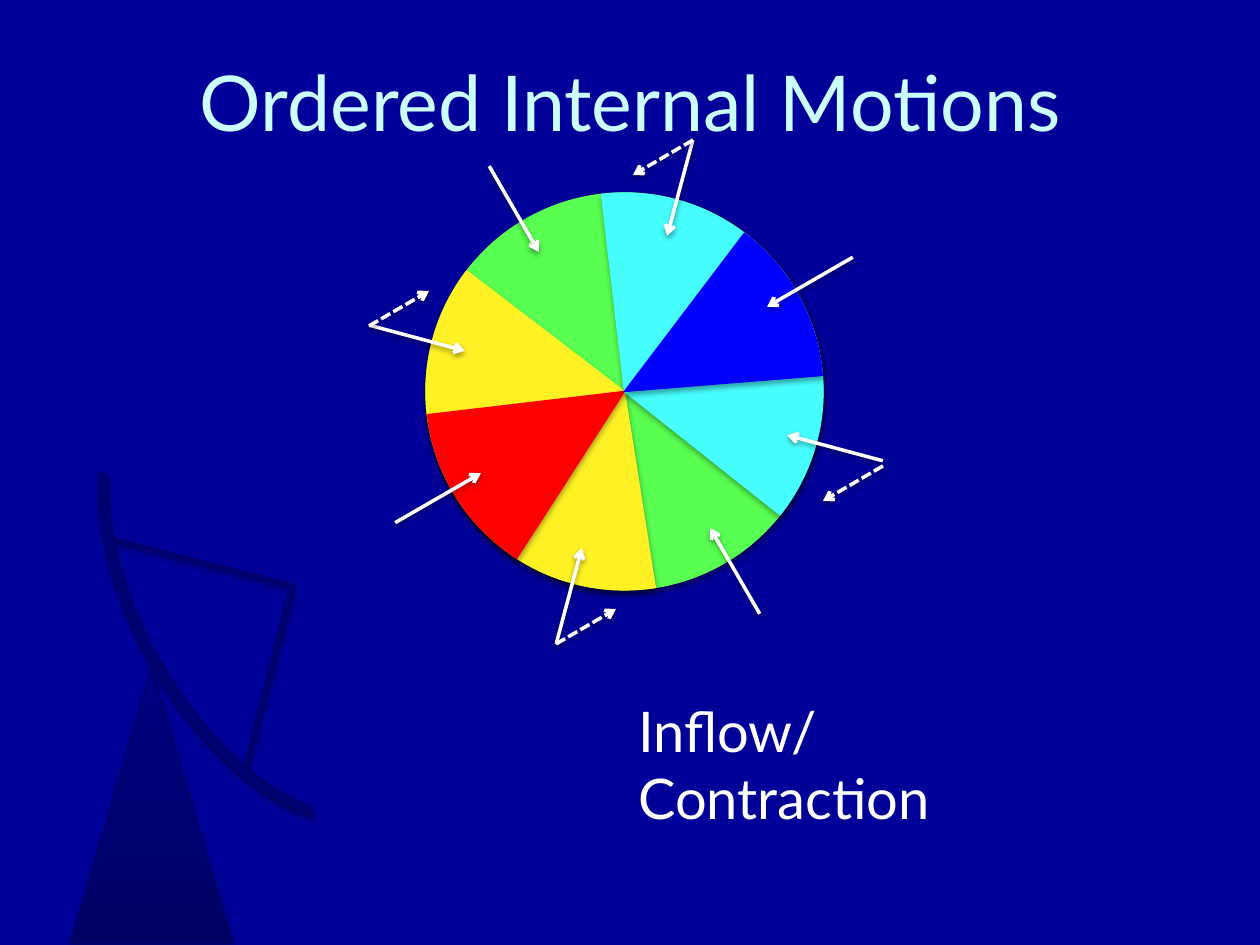
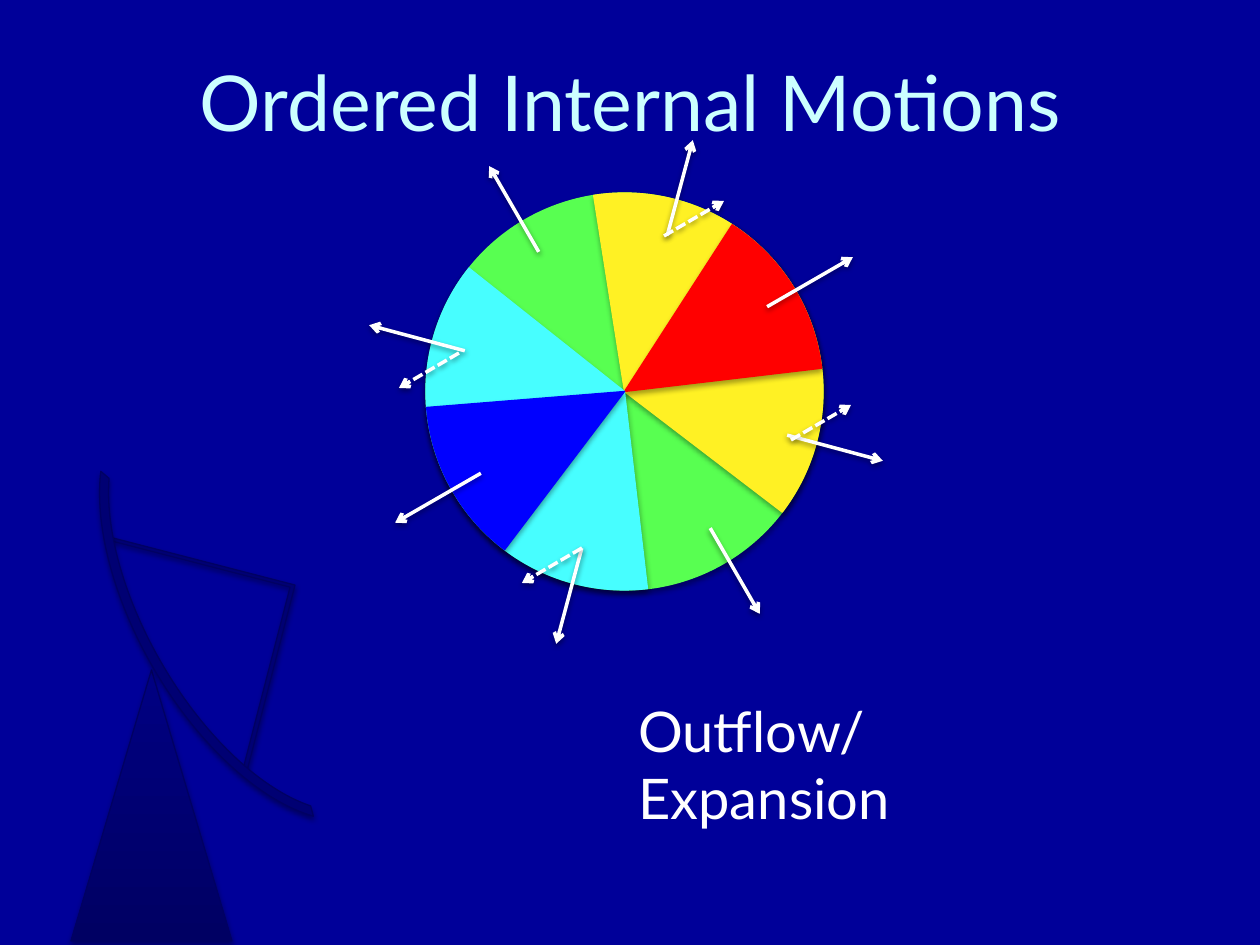
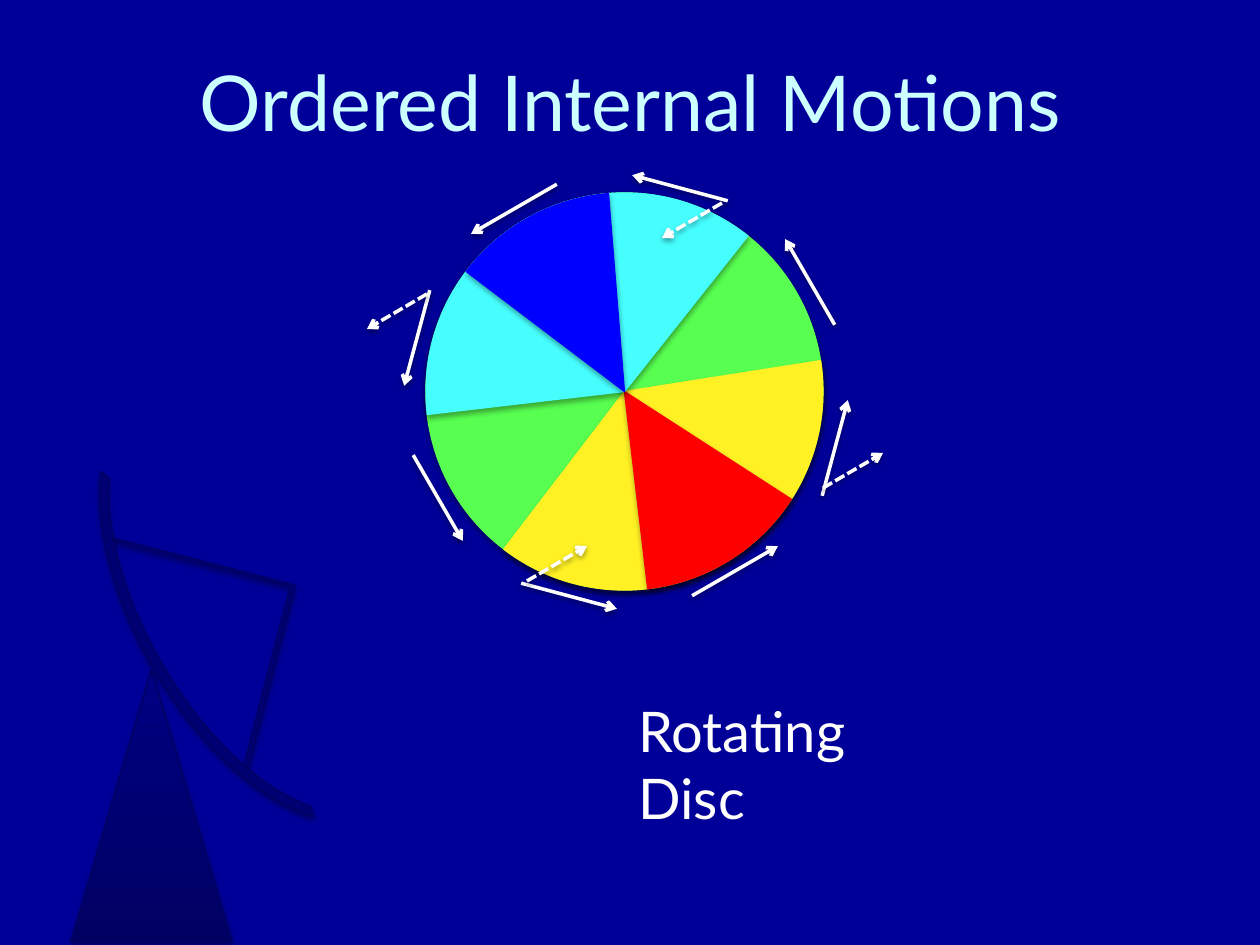
import math

import lxml.etree
import pptx
import pptx.dml.color
import pptx.enum.dml
import pptx.enum.shapes
import pptx.enum.text
import pptx.oxml.ns
import pptx.util

PX = 914400 / 126
FONT = "Lato"
COLORS = {
    "background": "000099", "title": "CCFFFF", "text": "FFFFFF", "shadow": "000000",
    "green": "58FF51", "yellow": "FFF124", "red": "FF0000", "cyan": "47FEFF",
    "blue": "0000FF", "dish": "000073", "dish_edge": "000063", "mast_top": "000082",
}
SHAPE = pptx.enum.shapes.MSO_SHAPE

TITLE_BOX = (95, 22, 1071, 158)
WHEEL_BOX = (426, 193, 397, 397)
TELESCOPE_BOX = (21, 484, 475, 457)
CAPTION_BOX = (626, 690, 325, 148)

# Wheel sectors: colour, start and end angle in degrees, extra rotation
SECTORS = [
    ("yellow", 111.06, 247.4, 0),
    ("red", 152.83, 203.27, 0),
    ("cyan", 113.34, 248.43, 180),
    ("blue", 337.16, 25.39, 0),
]

# Middle of each flow arrow from the wheel centre, 45 degrees apart
FLOW_MIDDLES = [(-110, -182), (-207, -53), (-186, 107), (-55, 205),
                (111, 180), (211, 57), (186, -109), (56, -203)]
FLOW_LENGTH = 99
SIGHT_STEP = (60, -35)

# Caption, turn of the arrows from inward, line-of-sight arrows (start x, y, sign)
MOTIONS = [
    ("Inflow/Contraction", 0,
     [(-255, -65, 1), (69, -251, -1), (-68, 253, 1), (259, 75, -1)]),
    ("Outflow/Expansion", 180,
     [(-165, -38, -1), (40, -155, 1), (-42, 157, -1), (167, 49, 1)]),
    ("Rotating Disc", 90,
     [(-197, -97, -1), (98, -188, -1), (-97, 190, 1), (199, 97, 1)]),
]


def px(length):
    return pptx.util.Emu(round(length * PX))


def color(name):
    return pptx.dml.color.RGBColor.from_string(COLORS[name])


def add_shadow(part, alpha, distance):
    effects = lxml.etree.SubElement(part._element.spPr, pptx.oxml.ns.qn("a:effectLst"))
    shadow = lxml.etree.SubElement(
        effects, pptx.oxml.ns.qn("a:outerShdw"),
        blurRad="40000", dist=str(distance), dir="5400000", rotWithShape="0")
    tint = lxml.etree.SubElement(shadow, pptx.oxml.ns.qn("a:srgbClr"), val=COLORS["shadow"])
    lxml.etree.SubElement(tint, pptx.oxml.ns.qn("a:alpha"), val=str(alpha * 1000))


def add_part(group, kind, box, fill, edge, rotation=0, adjustments=()):
    part = group.shapes.add_shape(kind, *map(px, box))
    part.rotation = rotation % 360
    for index, value in enumerate(adjustments):
        part.adjustments[index] = value
    part.fill.solid()
    part.fill.fore_color.rgb = color(fill)
    part.line.color.rgb = color(edge)
    part.line.width = pptx.util.Pt(0.75)
    add_shadow(part, 35, 23000)
    return part


def angles(*degrees):
    """Turn degrees into adjustments: 60000 units a degree, 100000 units a whole."""
    return [degree * 0.6 for degree in degrees]


def add_arrow(slide, start, end, dashed=False):
    arrow = slide.shapes.add_connector(
        pptx.enum.shapes.MSO_CONNECTOR.STRAIGHT, *map(px, (*start, *end)))
    arrow.line.color.rgb = color("text")
    arrow.line.width = pptx.util.Pt(2)
    if dashed:
        arrow.line.dash_style = pptx.enum.dml.MSO_LINE.SQUARE_DOT
    stroke = arrow._element.spPr.find(pptx.oxml.ns.qn("a:ln"))
    lxml.etree.SubElement(stroke, pptx.oxml.ns.qn("a:tailEnd"), type="arrow")
    add_shadow(arrow, 38, 20000)


def write(frame, text, size, tint):
    run = frame.paragraphs[0].add_run()
    run.text = text
    run.font.name = FONT
    run.font.size = pptx.util.Pt(size)
    run.font.color.rgb = color(tint)


def place_title(slide, box):
    title = slide.shapes.title
    title.left, title.top, title.width, title.height = map(px, box)
    title.text_frame.vertical_anchor = pptx.enum.text.MSO_ANCHOR.MIDDLE
    title.text_frame.paragraphs[0].alignment = pptx.enum.text.PP_ALIGN.CENTER
    write(title.text_frame, "Ordered Internal Motions", 44, "title")


def draw_wheel(slide, box, rotation):
    wheel = slide.shapes.add_group_shape()
    add_part(wheel, SHAPE.OVAL, box, "green", "green", rotation)
    for tint, start, end, extra in SECTORS:
        add_part(wheel, SHAPE.PIE, box, tint, tint, rotation + extra, angles(start, end))


def draw_telescope(slide, box):
    left, top, width, height = box
    telescope = slide.shapes.add_group_shape()
    # Mast
    mast = add_part(telescope, SHAPE.ISOSCELES_TRIANGLE,
                    (left + 50, top + 186, 161, height - 186), "dish", "dish_edge")
    mast.fill.gradient()
    mast.fill.gradient_angle = 270
    for stop, tint in zip(mast.fill.gradient_stops, ("mast_top", "dish_edge")):
        stop.color.rgb = color(tint)
    # Receiver struts and dish
    add_part(telescope, SHAPE.HALF_FRAME, (left + 61, top + 74, 192, 192),
             "dish", "dish_edge", 104.5, (0.022, 0.017))
    add_part(telescope, SHAPE.BLOCK_ARC, (left, top, width, 244),
             "dish", "dish_edge", 240, (*angles(195.38, 340.51), 0.039))


def place_caption(slide, box, text):
    caption = slide.shapes.add_textbox(*map(px, box))
    caption.text_frame.word_wrap = True
    write(caption.text_frame, text, 32, "text")


def draw_arrows(slide, box, turn, sight_starts):
    left, top, width, height = box
    center_x, center_y = left + width // 2, top + height // 2
    # Gas flow
    for index, (x, y) in enumerate(FLOW_MIDDLES):
        heading = math.radians(60 - 45 * index + turn)
        dx = FLOW_LENGTH / 2 * math.cos(heading)
        dy = FLOW_LENGTH / 2 * math.sin(heading)
        x, y = center_x + x, center_y + y
        add_arrow(slide, (x - dx, y - dy), (x + dx, y + dy))
    # Component along the line of sight
    for x, y, sign in sight_starts:
        x, y = center_x + x, center_y + y
        end = (x + sign * SIGHT_STEP[0], y + sign * SIGHT_STEP[1])
        add_arrow(slide, (x, y), end, dashed=True)


def build_motion_slide(deck, caption, turn, sight_starts):
    slide = deck.slides.add_slide(deck.slide_layouts[5])
    place_title(slide, TITLE_BOX)
    draw_wheel(slide, WHEEL_BOX, 330 - turn)
    draw_telescope(slide, TELESCOPE_BOX)
    place_caption(slide, CAPTION_BOX, caption)
    draw_arrows(slide, WHEEL_BOX, turn, sight_starts)


def main():
    deck = pptx.Presentation()
    deck.slide_width, deck.slide_height = px(1260), px(945)
    backdrop = deck.slide_master.background.fill
    backdrop.solid()
    backdrop.fore_color.rgb = color("background")
    for motion in MOTIONS:
        build_motion_slide(deck, *motion)
    deck.save("out.pptx")


if __name__ == "__main__":
    main()
